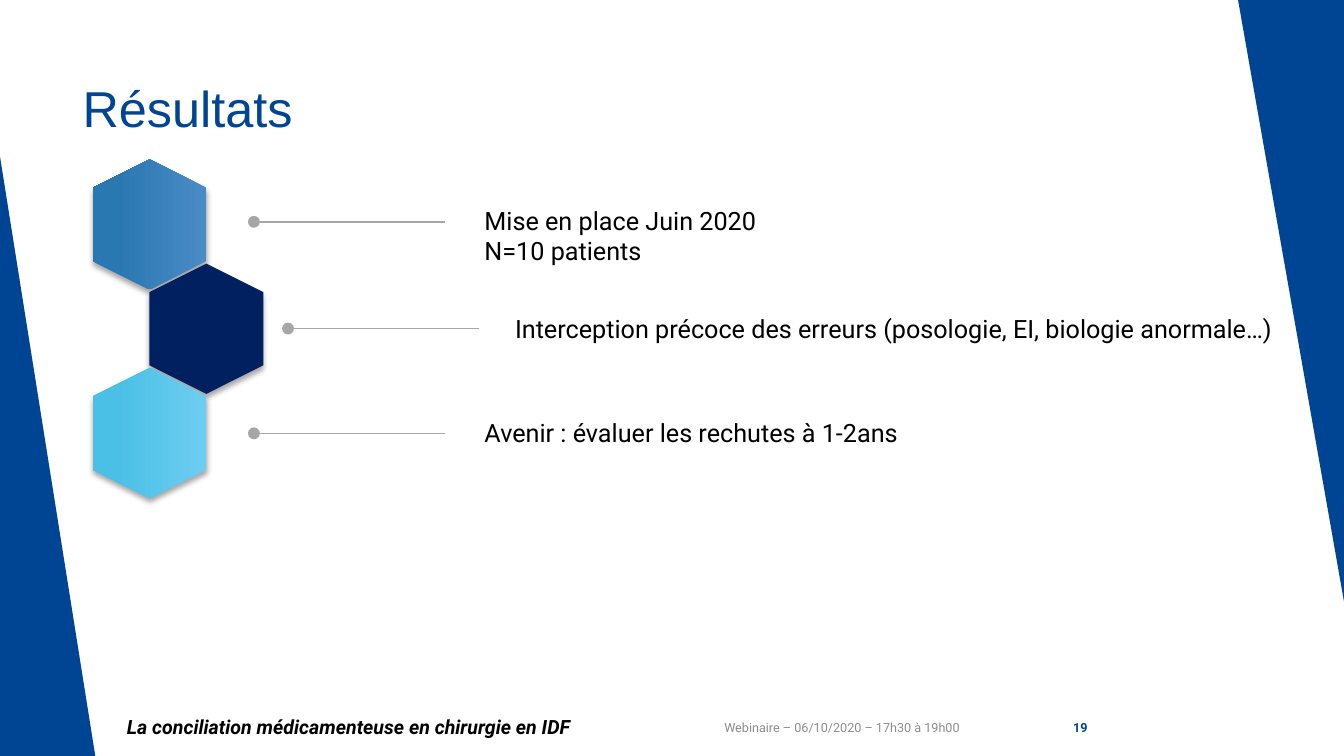
"""Build the results slide with three hexagons and their findings."""
from dataclasses import dataclass
from typing import Any

from lxml.etree import SubElement
from pptx import Presentation
from pptx.dml.color import RGBColor
from pptx.enum.shapes import MSO_CONNECTOR, MSO_SHAPE
from pptx.enum.text import MSO_ANCHOR, MSO_AUTO_SIZE, PP_ALIGN
from pptx.oxml.ns import qn
from pptx.shapes.autoshape import Shape
from pptx.slide import Slide
from pptx.text.text import TextFrame
from pptx.util import Cm, Pt

BLUE = RGBColor(0x00, 0x44, 0x94)
NAVY = RGBColor(0x00, 0x20, 0x60)
STEEL_LIGHT = RGBColor(0x4A, 0x8B, 0xC6)
STEEL_DARK = RGBColor(0x2A, 0x78, 0xB2)
SKY_LIGHT = RGBColor(0x6C, 0xCD, 0xF0)
SKY_DARK = RGBColor(0x4B, 0xC0, 0xE6)
GREY = RGBColor(0xA6, 0xA6, 0xA6)
FOOTER_GREY = RGBColor(0x8C, 0x8C, 0x8C)
BLACK = RGBColor(0x00, 0x00, 0x00)

HEXAGON_TOP, HEXAGON_PITCH = 4.22, 2.63
HEXAGON_WIDTH, HEXAGON_HEIGHT = 3.28, 2.87
DOT_SIZE, LEADER_LENGTH = 0.3, 4.67
FINDING_WIDTH = 19.69
FOOTER_TOP, FOOTER_HEIGHT = 17.81, 1.02


@dataclass(frozen=True)
class Edge:
    left: float
    top: float
    width: float
    rotation: int


@dataclass(frozen=True)
class Finding:
    lines: tuple[str, ...]
    colours: tuple[RGBColor, ...]
    hexagon_left: float
    dot_left: float
    leader_y: float
    text_left: float
    text_top: float
    text_height: float


@dataclass(frozen=True)
class FooterPart:
    wording: str
    left: float
    width: float
    align: PP_ALIGN
    style: dict[str, Any]


EDGES = (Edge(0, 3.94, 2.41, 0), Edge(31.2, 0, 2.67, 180))
EDGE_HEIGHT = 15.16

FINDINGS = (
    Finding(("Mise en place Juin 2020", "N=10 patients"),
            (STEEL_LIGHT, STEEL_DARK), 2.13, 6.25, 5.59, 11.96, 5.05, 1.8),
    Finding(("Interception précoce des erreurs (posologie, EI, biologie anormale…)",),
            (NAVY,), 3.56, 7.11, 8.28, 12.73, 7.77, 1.8),
    Finding(("Avenir : évaluer les rechutes à 1-2ans",),
            (SKY_LIGHT, SKY_DARK), 2.13, 6.25, 10.92, 11.96, 10.39, 1.02),
)

TITLE_STYLE = {"name": "Arial", "size": Pt(36), "bold": False}
FINDING_STYLE = {"name": "Roboto", "size": Pt(18), "color": BLACK}
FOOTER_PARTS = (
    FooterPart("La conciliation médicamenteuse en chirurgie en IDF", 2.95, 13.59, PP_ALIGN.LEFT,
               {"name": "Roboto", "size": Pt(14), "bold": True, "italic": True, "color": BLACK}),
    FooterPart("19", 25.76, 1.9, PP_ALIGN.RIGHT,
               {"name": "Roboto", "size": Pt(9), "bold": True, "color": BLUE}),
    FooterPart("Webinaire – 06/10/2020 – 17h30 à 19h00", 17.83, 6.6, PP_ALIGN.RIGHT,
               {"name": "Roboto", "size": Pt(9), "color": FOOTER_GREY}),
)


def write(frame: TextFrame, lines: tuple[str, ...], style: dict[str, Any],
          align: PP_ALIGN = PP_ALIGN.LEFT) -> None:
    """Fill a frame with one formatted paragraph per line."""
    frame.word_wrap = True
    frame.text = "\n".join(lines)
    for paragraph in frame.paragraphs:
        paragraph.alignment = align
        font = paragraph.runs[0].font
        for attribute, value in style.items():
            if attribute == "color":
                font.color.rgb = value
            else:
                setattr(font, attribute, value)


def add_plain_shape(shapes: Any, preset: MSO_SHAPE, left: float, top: float,
                    width: float, height: float, colours: tuple[RGBColor, ...]) -> Shape:
    """Add an outline-free shape with a solid or two-colour fill."""
    shape = shapes.add_shape(preset, Cm(left), Cm(top), Cm(width), Cm(height))
    shape.line.fill.background()
    shape.shadow.inherit = False
    if len(colours) == 1:
        shape.fill.solid()
        shape.fill.fore_color.rgb = colours[0]
    else:
        shape.fill.gradient()
        shape.fill.gradient_angle = 270
        for stop, colour, position in zip(shape.fill.gradient_stops, colours, (0, 0.78)):
            stop.color.rgb = colour
            stop.position = position
    return shape


def add_hexagon(slide: Slide, finding: Finding, row: int) -> None:
    """Add an upright hexagon with a soft shadow below it."""
    hexagon = add_plain_shape(slide.shapes, MSO_SHAPE.HEXAGON, finding.hexagon_left,
                              HEXAGON_TOP + row * HEXAGON_PITCH,
                              HEXAGON_WIDTH, HEXAGON_HEIGHT, finding.colours)
    hexagon.rotation = 90
    effects = hexagon._element.spPr.find(qn("a:effectLst"))
    shadow = SubElement(effects, qn("a:outerShdw"), blurRad=str(Pt(4)), dist=str(Pt(3)),
                        dir="5400000", rotWithShape="0")
    shade = SubElement(shadow, qn("a:srgbClr"), val=str(BLACK))
    SubElement(shade, qn("a:alpha"), val="35000")


def add_leader(slide: Slide, finding: Finding) -> None:
    """Add a grouped dot and line leading to the finding."""
    group = slide.shapes.add_group_shape()
    add_plain_shape(group.shapes, MSO_SHAPE.OVAL, finding.dot_left,
                    finding.leader_y - DOT_SIZE / 2, DOT_SIZE, DOT_SIZE, (GREY,))
    start, level = finding.dot_left + DOT_SIZE, Cm(finding.leader_y)
    leader = group.shapes.add_connector(MSO_CONNECTOR.STRAIGHT, Cm(start), level,
                                        Cm(start + LEADER_LENGTH), level)
    leader.line.color.rgb = GREY
    leader.line.width = Pt(1)
    SubElement(leader._element.spPr, qn("a:effectLst"))


def add_finding_text(slide: Slide, finding: Finding) -> None:
    """Add the wording beside a leader."""
    box = slide.shapes.add_textbox(Cm(finding.text_left), Cm(finding.text_top),
                                   Cm(FINDING_WIDTH), Cm(finding.text_height))
    write(box.text_frame, finding.lines, FINDING_STYLE)
    box.text_frame.auto_size = MSO_AUTO_SIZE.SHAPE_TO_FIT_TEXT


def add_footer_part(slide: Slide, part: FooterPart) -> None:
    """Add one vertically centred piece of the footer."""
    box = slide.shapes.add_textbox(Cm(part.left), Cm(FOOTER_TOP),
                                   Cm(part.width), Cm(FOOTER_HEIGHT))
    box.text_frame.vertical_anchor = MSO_ANCHOR.MIDDLE
    write(box.text_frame, (part.wording,), part.style, part.align)


def format_title(slide: Slide) -> None:
    """Place and format the title placeholder."""
    title = slide.shapes.title
    title.left, title.top, title.width, title.height = Cm(1.88), Cm(1.7), Cm(23.88), Cm(3.66)
    frame = title.text_frame
    frame.auto_size = MSO_AUTO_SIZE.NONE
    frame.vertical_anchor = MSO_ANCHOR.TOP
    frame.margin_left, frame.margin_top = Cm(0.2), Cm(0.25)
    write(frame, ("Résultats",), TITLE_STYLE | {"color": BLUE})


def main() -> None:
    """Build and save the slide."""
    presentation = Presentation()
    presentation.slide_width, presentation.slide_height = Cm(33.87), Cm(19.05)
    slide = presentation.slides.add_slide(presentation.slide_layouts[5])
    for edge in EDGES:
        triangle = add_plain_shape(slide.shapes, MSO_SHAPE.RIGHT_TRIANGLE, edge.left, edge.top,
                                   edge.width, EDGE_HEIGHT, (BLUE,))
        triangle.rotation = edge.rotation
    format_title(slide)
    for part in FOOTER_PARTS:
        add_footer_part(slide, part)
    for row, finding in enumerate(FINDINGS):
        add_hexagon(slide, finding, row)
        add_leader(slide, finding)
        add_finding_text(slide, finding)
    presentation.save("out.pptx")


if __name__ == "__main__":
    main()
